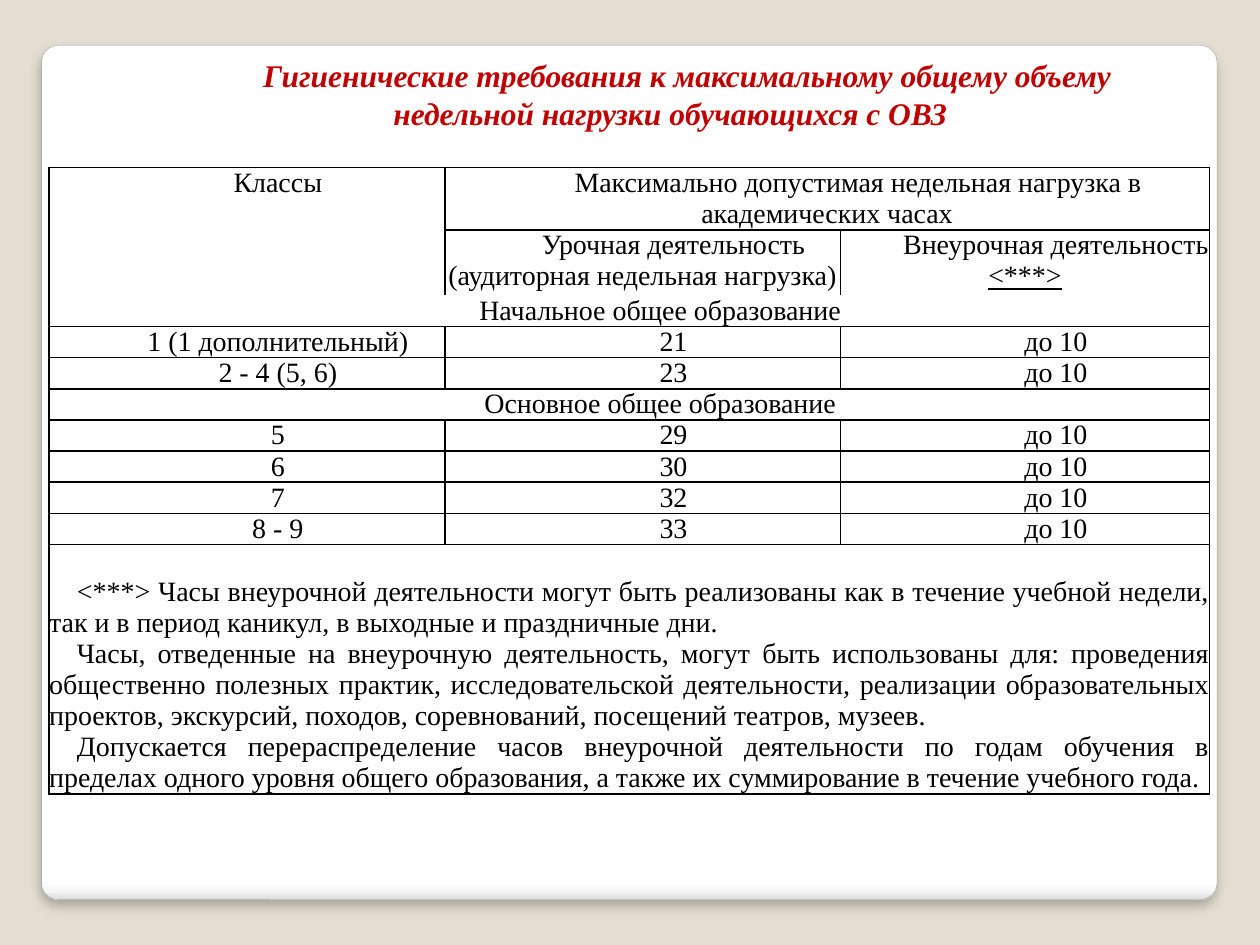
import copy
import pptx
import pptx.util
import pptx.dml.color
import pptx.enum.shapes
import pptx.enum.text
import pptx.oxml
import pptx.oxml.ns

Inches, Pt = pptx.util.Inches, pptx.util.Pt
RGB = pptx.dml.color.RGBColor
ALIGN = pptx.enum.text.PP_ALIGN
qn = pptx.oxml.ns.qn

BEIGE = RGB(0xE3, 0xDE, 0xD1)
BLACK = RGB(0, 0, 0)
RED = RGB(0xC0, 0, 0)
GREY = RGB(0xA4, 0xA4, 0xA4)
SHADES = [(0, RGB(255, 255, 255)), (0.98, RGB(255, 255, 255)),
          (0.99, RGB(0xF7, 0xF7, 0xF7)), (1, RGB(0xDA, 0xDA, 0xDA))]
FONT = "Times New Roman"
NS = 'xmlns:a="http://schemas.openxmlformats.org/drawingml/2006/main"'
WIDE, SLIM = 0.49, 0.22  # first-line indents

TITLE = [("Гигиенические требования к максимальному общему объему", WIDE),
         ("недельной нагрузки обучающихся с ОВЗ", SLIM)]
MARK = "<***>"
EXTRA = "до 10"
ROWS = [
    ["Классы", "Максимально допустимая недельная нагрузка в академических часах"],
    ["", "Урочная деятельность (аудиторная недельная нагрузка)",
     "Внеурочная деятельность "],
    ["Начальное общее образование"],
    ["1 (1 дополнительный)", "21", EXTRA],
    ["2 - 4 (5, 6)", "23", EXTRA],
    ["Основное общее образование"],
    ["5", "29", EXTRA],
    ["6", "30", EXTRA],
    ["7", "32", EXTRA],
    ["8 - 9", "33", EXTRA],
    [],
]
NOTES = [
    MARK + " Часы внеурочной деятельности могут быть реализованы как в течение "
    "учебной недели, так и в период каникул, в выходные и праздничные дни.",
    "Часы, отведенные на внеурочную деятельность, могут быть использованы для: "
    "проведения общественно полезных практик, исследовательской деятельности, "
    "реализации образовательных проектов, экскурсий, походов, соревнований, "
    "посещений театров, музеев.",
    "Допускается перераспределение часов внеурочной деятельности по годам обучения "
    "в пределах одного уровня общего образования, а также их суммирование в течение "
    "учебного года.",
]
LAST = len(ROWS) - 1
COLS = [3.14, 3.14, 2.93]
HEIGHTS = [0.35, 0.52] + [0.17] * (LAST - 2) + [1.57]
SPANS = [((0, 0), (1, 0)), ((0, 1), (0, 2))] + [
    ((r, 0), (r, 2)) for r in (2, 5, LAST)]


def style(para, size, color, indent, align=ALIGN.CENTER):
    para.alignment = align
    para.font.name, para.font.size = FONT, Pt(size)
    para.font.color.rgb = color
    props = para._p.get_or_add_pPr()
    props.set("marL", "0")
    props.set("indent", str(Inches(indent)))


def border(cell, sides):
    """Draw the named sides in black and hide the others."""
    props = cell._tc.get_or_add_tcPr()
    for i, side in enumerate("LRTB"):
        paint = ('<a:solidFill><a:srgbClr val="000000"/></a:solidFill>'
                 if side in sides else "<a:noFill/>")
        props.insert(i, pptx.oxml.parse_xml(
            f'<a:ln{side} {NS} w="{Pt(1)}">{paint}</a:ln{side}>'))


def edges(r, c):
    """Sides of a cell; the header and the first band share no line."""
    if r == 0:
        return "LRT" if c == 0 else "LRTB"
    if r == 1:
        return "LR" if c == 0 else "LRT"
    return "LRB" if r == 2 else "LRTB"


def add_panel(slide):
    panel = slide.shapes.add_shape(
        pptx.enum.shapes.MSO_SHAPE.ROUNDED_RECTANGLE,
        Inches(0.33), Inches(0.36), Inches(9.33), Inches(6.78))
    panel.adjustments[0] = 0.02
    panel.line.color.rgb, panel.line.width = GREY, Pt(0.16)
    panel.fill.gradient()
    panel.fill.gradient_angle = 270
    stops = panel._element.spPr.find(qn("a:gradFill")).find(qn("a:gsLst"))
    for _ in range(len(SHADES) - len(stops)):
        stops.append(copy.deepcopy(stops[-1]))
    for stop, (place, color) in zip(panel.fill.gradient_stops, SHADES):
        stop.position, stop.color.rgb = place, color
    panel.shadow.inherit = False
    panel._element.spPr.find(qn("a:effectLst")).append(pptx.oxml.parse_xml(
        f'<a:outerShdw {NS} blurRad="{Pt(6)}" dist="{Pt(4)}" dir="5400000" '
        'algn="t" rotWithShape="0"><a:srgbClr val="000000">'
        '<a:alpha val="25000"/></a:srgbClr></a:outerShdw>'))


def add_hours(slide):
    table = slide.shapes.add_table(
        len(ROWS), len(COLS), Inches(0.39), Inches(1.33),
        Inches(sum(COLS)), Inches(sum(HEIGHTS))).table
    table.first_row = table.horz_banding = False
    for col, width in zip(table.columns, COLS):
        col.width = Inches(width)
    for row, height in zip(table.rows, HEIGHTS):
        row.height = Inches(height)
    for start, end in SPANS:
        table.cell(*start).merge(table.cell(*end))
    for r, texts in enumerate(ROWS):
        for c in range(len(COLS)):
            cell = table.cell(r, c)
            cell.margin_left = cell.margin_right = 0
            cell.margin_top = cell.margin_bottom = 0
            cell.fill.background()
            border(cell, edges(r, c))
            para = cell.text_frame.paragraphs[0]
            if c < len(texts) and texts[c]:
                para.add_run().text = texts[c]
            style(para, 16, BLACK, WIDE)
    link = table.cell(1, 2).text_frame.paragraphs[0].add_run()
    link.text, link.font.underline = MARK, True

    foot = table.cell(LAST, 0)
    foot.margin_top = Inches(0.25)
    foot.text = "\n".join(NOTES)
    for para in foot.text_frame.paragraphs:
        style(para, 16, BLACK, SLIM, ALIGN.JUSTIFY)


def add_title(slide):
    frame = slide.shapes.add_textbox(
        Inches(1.46), Inches(0.39), Inches(7.5), Inches(0.71)).text_frame
    frame.word_wrap = False
    frame.auto_size = pptx.enum.text.MSO_AUTO_SIZE.SHAPE_TO_FIT_TEXT
    frame.vertical_anchor = pptx.enum.text.MSO_ANCHOR.MIDDLE
    frame.text = "\n".join(text for text, _ in TITLE)
    for para, (_, indent) in zip(frame.paragraphs, TITLE):
        style(para, 18, RED, indent)
        para.font.bold = para.font.italic = True


def main():
    deck = pptx.Presentation()
    deck.slide_width, deck.slide_height = Inches(10), Inches(7.5)
    slide = deck.slides.add_slide(deck.slide_layouts[6])
    slide.background.fill.solid()
    slide.background.fill.fore_color.rgb = BEIGE
    add_panel(slide)
    add_hours(slide)
    add_title(slide)
    deck.save("out.pptx")


if __name__ == "__main__":
    main()
